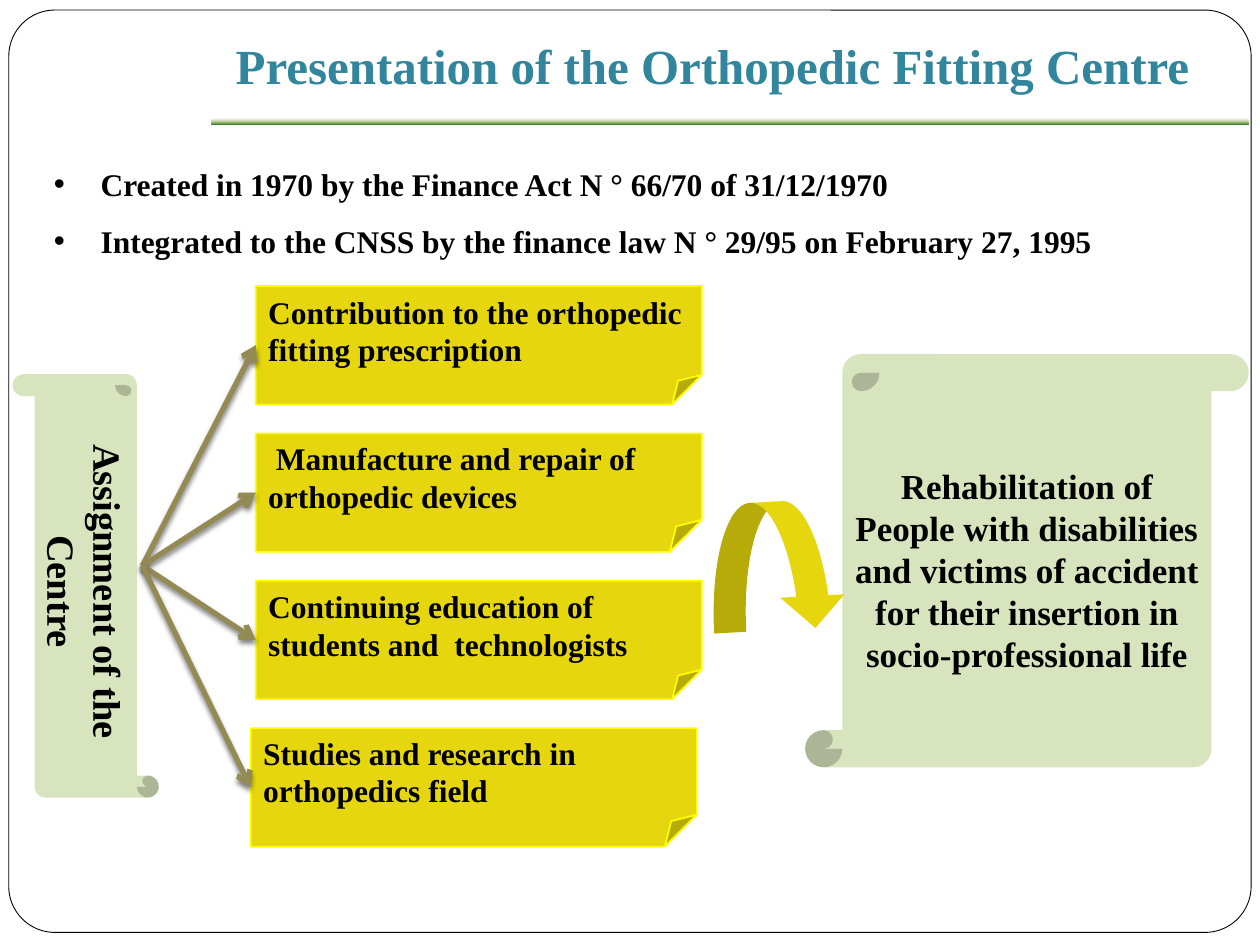
"""Build the slide presenting the Orthopedic Fitting Centre."""
from dataclasses import dataclass

from lxml.etree import SubElement
from pptx import Presentation
from pptx.dml.color import RGBColor
from pptx.enum.shapes import MSO_CONNECTOR, MSO_SHAPE
from pptx.enum.text import MSO_ANCHOR, PP_ALIGN
from pptx.oxml import parse_xml
from pptx.oxml.ns import nsdecls, qn
from pptx.shapes.autoshape import Shape
from pptx.slide import Slide
from pptx.text.text import TextFrame
from pptx.util import Inches, Pt


@dataclass(frozen=True)
class Theme:
    font: str = "Times New Roman"
    ink: str = "000000"
    paper: str = "FFFFFF"
    title: str = "31859C"
    note: str = "E5D60D"
    note_edge: str = "FFFF00"
    scroll: str = "D7E4BD"
    arrow: str = "948A54"
    rule_middle: str = "9CB86E"
    rule_end: str = "156B13"
    title_size: int = 28
    body_size: int = 18
    assignment_size: int = 22
    goal_size: int = 20


@dataclass(frozen=True)
class Area:
    left: float
    top: float
    width: float
    height: float

    def lengths(self) -> tuple:
        return tuple(Inches(n) for n in (self.left, self.top, self.width, self.height))


@dataclass(frozen=True)
class Note:
    text: str
    left: float
    fold: float


THEME = Theme()
NOTES = (
    Note("Contribution to the orthopedic fitting prescription", 2.03, 0.25),
    Note(" Manufacture and repair of orthopedic devices", 2.03, 0.27),
    Note("Continuing education of students and  technologists", 2.03, 0.25),
    Note("Studies and research in orthopedics field", 1.99, 0.27),
)
NOTE_TOP, NOTE_STEP = 2.27, 1.17
FACTS = (
    "Created in 1970 by the Finance Act N ° 66/70 of 31/12/1970",
    "Integrated to the CNSS by the finance law N ° 29/95 on February 27, 1995",
)


def write(frame: TextFrame, lines: tuple[str, ...], size: int, color: str = THEME.ink,
          align: PP_ALIGN = PP_ALIGN.CENTER, bullet: bool = False) -> None:
    """Fill a text frame with bold paragraphs."""
    frame.word_wrap = True
    for index, line in enumerate(lines):
        paragraph = frame.add_paragraph() if index else frame.paragraphs[0]
        paragraph.text = line
        paragraph.alignment = align
        if bullet:
            paragraph.line_spacing = 1.5
            properties = paragraph._p.get_or_add_pPr()
            properties.set("marL", str(Inches(0.37)))
            properties.set("indent", str(-Inches(0.37)))
            SubElement(properties, qn("a:buFont"), typeface="Arial")
            SubElement(properties, qn("a:buChar"), char="•")
        font = paragraph.font
        font.name, font.size, font.bold = THEME.font, Pt(size), True
        font.color.rgb = RGBColor.from_string(color)


def add_box(page: Slide, kind: MSO_SHAPE, area: Area, fill: str, adjustment: float | None = None,
            edge: str | None = None, edge_width: float = 1, rotation: float = 0) -> Shape:
    """Draw a flat preset shape."""
    box = page.shapes.add_shape(kind, *area.lengths())
    box.shadow.inherit = False
    box.rotation = rotation
    box.fill.solid()
    box.fill.fore_color.rgb = RGBColor.from_string(fill)
    if adjustment is not None:
        guides = box._element.spPr.find(qn("a:prstGeom")).find(qn("a:avLst"))
        guides.clear()
        SubElement(guides, qn("a:gd"), name="adj", fmla=f"val {round(adjustment * 100000)}")
    if edge:
        box.line.color.rgb = RGBColor.from_string(edge)
        box.line.width = Pt(edge_width)
    else:
        box.line.fill.background()
    box.text_frame.vertical_anchor = MSO_ANCHOR.MIDDLE
    return box


def add_rule(page: Slide, area: Area) -> None:
    """Draw the gradient bar below the title."""
    rule = add_box(page, MSO_SHAPE.RECTANGLE, area, THEME.rule_end)
    gradient = parse_xml(
        f'<a:gradFill {nsdecls("a")} rotWithShape="1"><a:gsLst>'
        f'<a:gs pos="0"><a:srgbClr val="{THEME.paper}"><a:alpha val="78000"/></a:srgbClr></a:gs>'
        f'<a:gs pos="65000"><a:srgbClr val="{THEME.rule_middle}"/></a:gs>'
        f'<a:gs pos="100000"><a:srgbClr val="{THEME.rule_end}"/></a:gs>'
        '</a:gsLst><a:lin ang="5400000" scaled="0"/></a:gradFill>')
    properties = rule._element.spPr
    properties.replace(properties.find(qn("a:solidFill")), gradient)


def add_arrow(page: Slide, left: float, top: float, target: Shape) -> None:
    """Draw a shadowed arrow to the left side of a note."""
    start = Inches(left), Inches(top)
    arrow = page.shapes.add_connector(MSO_CONNECTOR.STRAIGHT, *start, *start)
    arrow.end_connect(target, 1)
    arrow.line.color.rgb = RGBColor.from_string(THEME.arrow)
    arrow.line.width = Pt(3)
    properties = arrow._element.spPr
    SubElement(properties.find(qn("a:ln")), qn("a:tailEnd"), type="arrow")
    properties.append(parse_xml(
        f'<a:effectLst {nsdecls("a")}><a:outerShdw blurRad="{Pt(3)}" dist="{Pt(2)}" '
        f'dir="5400000" rotWithShape="0"><a:srgbClr val="{THEME.ink}">'
        '<a:alpha val="50000"/></a:srgbClr></a:outerShdw></a:effectLst>'))


def main() -> None:
    """Build and save the deck."""
    deck = Presentation()
    deck.slide_width, deck.slide_height = Inches(10), Inches(7.5)
    page = deck.slides.add_slide(deck.slide_layouts[6])

    add_box(page, MSO_SHAPE.ROUNDED_RECTANGLE, Area(0.07, 0.08, 9.86, 7.32), THEME.paper,
            0.05, THEME.ink, 0.5)
    title = page.shapes.add_textbox(*Area(1.72, 0.15, 7.87, 0.78).lengths()).text_frame
    title.vertical_anchor = MSO_ANCHOR.MIDDLE
    title.margin_bottom = Inches(0.1)
    write(title, ("Presentation of the Orthopedic Fitting Centre",), THEME.title_size, THEME.title)
    add_rule(page, Area(1.68, 0.94, 8.23, 0.05))

    facts = page.shapes.add_textbox(*Area(0.33, 1.11, 9.16, 1.01).lengths())
    write(facts.text_frame, FACTS, THEME.body_size, align=PP_ALIGN.JUSTIFY, bullet=True)

    targets = []
    for row, note in enumerate(NOTES):
        area = Area(note.left, NOTE_TOP + row * NOTE_STEP, 3.54, 0.94)
        box = add_box(page, MSO_SHAPE.FOLDED_CORNER, area, THEME.note, note.fold, THEME.note_edge)
        write(box.text_frame, (note.text,), THEME.body_size, align=PP_ALIGN.LEFT)
        targets.append(box)

    assignment = add_box(page, MSO_SHAPE.HORIZONTAL_SCROLL, Area(-1, 4.07, 3.36, 1.16),
                         THEME.scroll, 0.15, rotation=90)
    write(assignment.text_frame, ("Assignment of the Centre",), THEME.assignment_size)
    goal = add_box(page, MSO_SHAPE.VERTICAL_SCROLL, Area(6.39, 2.81, 3.52, 3.28),
                   THEME.scroll, 0.09)
    write(goal.text_frame, ("Rehabilitation of People with disabilities and victims of accident "
                            "for their insertion in socio-professional life",), THEME.goal_size)
    add_box(page, MSO_SHAPE.CURVED_DOWN_ARROW, Area(5.64, 3.98, 1.06, 1.02), THEME.note,
            rotation=356.9)

    for target in targets:
        add_arrow(page, 1.13, 4.49, target)

    deck.save("out.pptx")


if __name__ == "__main__":
    main()
